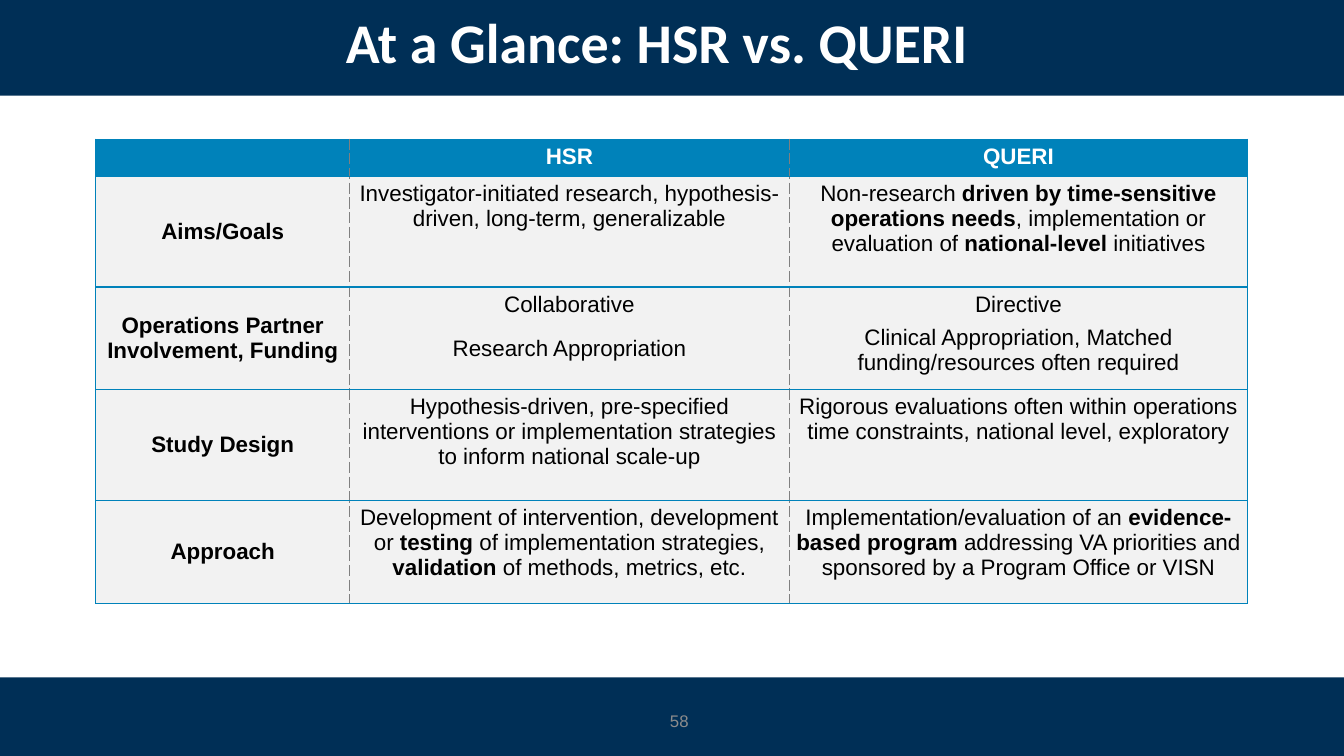
from pptx import Presentation
from pptx.util import Pt
from pptx.dml.color import RGBColor as RGB
from pptx.enum.shapes import MSO_SHAPE as SHAPE
from pptx.enum.text import MSO_ANCHOR as ANCHOR, PP_ALIGN as ALIGN
from pptx.oxml.ns import qn
from lxml.etree import SubElement

W, H = 960, 540
C = {"navy": "002F56", "blue": "0082BA", "gray": "808080", "pale": "F2F2F2",
     "white": "FFFFFF", "black": "000000", "number": "8C8C8C"}
COLS = [181.4, 313.9, 327.6]
ROWS = [25.2, 79.2, 73.4, 79.2, 73.4]

# Each cell is a list of paragraphs; asterisks enclose bold words
CELLS = [
    [[""], ["*HSR*"], ["*QUERI*"]],
    [["*Aims/Goals*"],
     ["Investigator-initiated research, hypothesis-driven, long-term, generalizable"],
     ["Non-research *driven by time-sensitive operations needs*, implementation "
      "or evaluation of *national-level *initiatives"]],
    [["*Operations Partner Involvement, Funding*"],
     ["Collaborative", "Research Appropriation"],
     ["Directive", "Clinical Appropriation, Matched funding/resources often required"]],
    [["*Study Design*"],
     ["Hypothesis-driven, pre-specified interventions or implementation strategies "
      "to inform national scale-up"],
     ["Rigorous evaluations often within operations time constraints, national level, "
      "exploratory"]],
    [["*Approach*"],
     ["Development of intervention, development or *testing* of implementation "
      "strategies, *validation *of methods, metrics, etc."],
     ["Implementation/evaluation of an *evidence-based program *addressing VA "
      "priorities and sponsored by a Program Office or VISN"]],
]


def write(tf, paragraphs, size=16, color="black", font="Arial", align=ALIGN.CENTER,
          before=3, after=0, line=None):
    tf.word_wrap = True
    for i, text in enumerate(paragraphs):
        p = tf.paragraphs[0] if i == 0 else tf.add_paragraph()
        p.alignment = align
        p.space_before = Pt(before if i else 0)
        p.space_after = Pt(after)
        if line:
            p.line_spacing = line
        if not text:
            p._p.get_or_add_endParaRPr().set("sz", str(size * 100))
        for j, part in enumerate(text.split("*")):
            if part:
                r = p.add_run()
                r.text = part
                r.font.name, r.font.size, r.font.bold = font, Pt(size), j % 2 == 1
                r.font.color.rgb = RGB.from_string(C[color])


def add_text(s, box, text, anchor, **fmt):
    tf = s.shapes.add_textbox(*map(Pt, box)).text_frame
    tf.vertical_anchor = anchor
    write(tf, [text], **fmt)


def add_bar(s, box):
    sp = s.shapes.add_shape(SHAPE.RECTANGLE, *map(Pt, box))
    sp.shadow.inherit = False
    sp.fill.solid()
    sp.fill.fore_color.rgb = RGB.from_string(C["navy"])
    sp.line.fill.background()


def set_border(cell, side, color, dash="solid"):
    ln = SubElement(cell._tc.get_or_add_tcPr(), qn("a:ln" + side), w=str(Pt(1)))
    fill = SubElement(ln, qn("a:solidFill"))
    SubElement(fill, qn("a:srgbClr"), val=C[color])
    SubElement(ln, qn("a:prstDash"), val=dash)


def add_header(s, x, y, w, h):
    add_bar(s, (x, y, w, h))
    add_text(s, (x + 47.5, y + 0.7, 843.1, 56.9), "*At a Glance: HSR vs. QUERI*",
             ANCHOR.BOTTOM, size=40, color="white", font="Calibri", line=0.9)


def add_comparison(s, x, y):
    table = s.shapes.add_table(len(ROWS), len(COLS), Pt(x), Pt(y),
                               Pt(sum(COLS)), Pt(sum(ROWS))).table
    for col, width in zip(table.columns, COLS):
        col.width = Pt(width)
    for row, height in zip(table.rows, ROWS):
        row.height = Pt(height)
    inner, outer = ("gray", "dash"), ("blue",)
    last = len(COLS) - 1
    for i, row in enumerate(CELLS):
        for j, paragraphs in enumerate(row):
            cell = table.cell(i, j)
            cell.margin_left = cell.margin_right = Pt(3.6)
            cell.margin_top = cell.margin_bottom = Pt(3.6)
            cell.vertical_anchor = ANCHOR.TOP if i == 0 or j else ANCHOR.MIDDLE
            set_border(cell, "L", *(inner if j else outer))
            set_border(cell, "R", *(inner if j < last else outer))
            set_border(cell, "T", *outer)
            set_border(cell, "B", *outer)
            cell.fill.solid()
            cell.fill.fore_color.rgb = RGB.from_string(C["pale" if i else "blue"])
            # The funding line of the HSR column sits lower than its neighbour
            write(cell.text_frame, paragraphs, color="black" if i else "white",
                  before=10.5 if j == 1 else 3, after=3)


def add_footer(s, x, y, w, h):
    add_bar(s, (x, y, w, h))
    add_text(s, (x + 283, y + 16.5, 216, 28.8), "58", ANCHOR.MIDDLE,
             size=12, color="number", align=ALIGN.RIGHT)


def main():
    prs = Presentation()
    prs.slide_width, prs.slide_height = Pt(W), Pt(H)
    s = prs.slides.add_slide(prs.slide_layouts[6])
    add_header(s, 0, 0, W, 68.4)
    add_comparison(s, 68.4, 99.4)
    add_footer(s, 0, 483.8, W, H - 483.8)
    prs.save("out.pptx")


if __name__ == "__main__":
    main()
